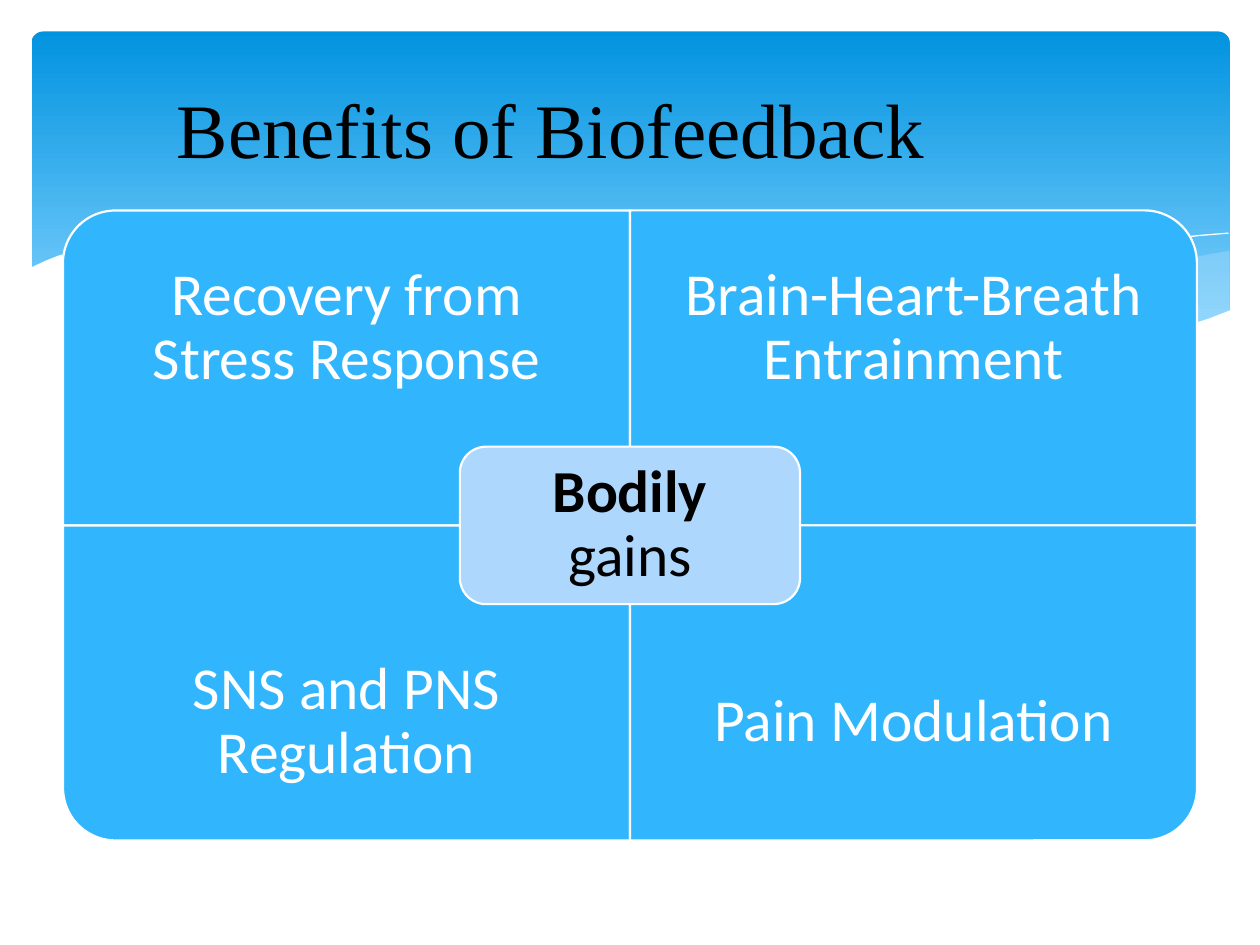
from lxml import etree
from pptx import Presentation
from pptx.dml.color import RGBColor
from pptx.enum.shapes import MSO_SHAPE
from pptx.enum.text import MSO_ANCHOR, PP_ALIGN
from pptx.oxml.ns import qn
from pptx.util import Inches, Pt

ROUND_RECT = MSO_SHAPE.ROUNDED_RECTANGLE
ONE_ROUND_CORNER = MSO_SHAPE.ROUND_1_RECTANGLE
MIDDLE, CENTER = MSO_ANCHOR.MIDDLE, PP_ALIGN.CENTER

WHITE = RGBColor(0xFF, 0xFF, 0xFF)
BLACK = RGBColor(0x00, 0x00, 0x00)
BANNER_TOP = RGBColor(0x02, 0x93, 0xE0)
BANNER_BOTTOM = RGBColor(0x83, 0xD3, 0xFE)
WAVE_BLUE = RGBColor(0xC6, 0xE7, 0xFC)
CARD_BLUE = RGBColor(0x31, 0xB6, 0xFD)
CENTER_BLUE = RGBColor(0xAE, 0xD7, 0xFE)

# Content: quadrants read row by row, with the turn of the rounded corner
TITLE = "Benefits of Biofeedback"
QUADRANTS = [
    ("Recovery from Stress Response", 270),
    ("Brain-Heart-Breath Entrainment", 0),
    ("SNS and PNS Regulation", 180),
    ("Pain Modulation", 90),
]
CENTER_RUNS = [("Bodily", True), (" gains", False)]
TITLE_FORMAT = {"size": Pt(44), "name": "Times New Roman"}
LABEL_FORMAT = {"size": Pt(34), "name": "Calibri"}

# Banner waves, points in inches
RIGHT_WAVE = [
    (9.75, 1.99), (9.48, 2.04), (9.06, 2.13), (8.61, 2.23), (8.05, 2.37),
    (7.53, 2.48), (7.06, 2.57), (6.61, 2.65), (7.05, 2.71), (7.45, 2.75),
    (7.92, 2.77), (8.35, 2.77), (8.72, 2.74), (9.05, 2.69), (9.35, 2.61),
    (9.63, 2.52), (9.76, 2.47), (9.76, 1.99),
]
MIDDLE_WAVE = [
    (8.93, 2.73), (8.37, 2.65), (7.75, 2.54), (7.06, 2.4), (6.29, 2.22),
    (5.69, 2.08), (5.14, 1.98), (4.65, 1.91), (4.2, 1.87), (3.8, 1.86),
    (3.28, 1.87), (2.86, 1.91), (3.42, 1.99), (4.04, 2.11), (4.91, 2.32),
    (5.66, 2.48), (6.34, 2.61), (6.95, 2.7), (7.48, 2.76), (7.96, 2.78),
    (8.48, 2.77), (8.93, 2.73),
]
LONG_LINE = [
    (3.09, 1.95), (3.35, 1.91), (3.74, 1.88), (4.16, 1.87), (4.69, 1.89),
    (5.33, 1.94), (6.08, 2.04), (6.95, 2.19), (7.95, 2.41), (9.07, 2.72),
]
SHORT_LINE = [
    (6.13, 2.57), (6.72, 2.41), (7.48, 2.23), (8.06, 2.1), (8.66, 1.99),
    (9.1, 1.92), (9.51, 1.87), (9.75, 1.85),
]
WHITE_WAVE = [
    (9.77, 2.46), (9.59, 2.53), (9.4, 2.59), (9.1, 2.67), (8.75, 2.73),
    (8.37, 2.76), (7.93, 2.76), (7.44, 2.74), (6.88, 2.68), (6.26, 2.58),
    (5.55, 2.45), (4.75, 2.27), (3.91, 2.07), (3.39, 1.97), (2.92, 1.91),
    (2.5, 1.86), (2.11, 1.84), (1.77, 1.84), (1.32, 1.86), (0.95, 1.91),
    (0.67, 1.97), (0.46, 2.03), (0.36, 2.07), (0.23, 2.13), (0.23, 3.29),
    (9.77, 3.29),
]
# Points, fill, opacity in percent
WAVES = [
    (RIGHT_WAVE, WAVE_BLUE, 29),
    (MIDDLE_WAVE, WAVE_BLUE, 40),
    (LONG_LINE, None, 100),
    (SHORT_LINE, None, 100),
    (WHITE_WAVE, WHITE, 100),
]

# Layout in inches
GRID_LEFT, GRID_TOP = 0.5, 1.67
CARD_WIDTH, CARD_HEIGHT = 4.5, 2.5
LABEL_HEIGHT = 0.75 * CARD_HEIGHT
CENTER_WIDTH, CENTER_HEIGHT = 0.6 * CARD_WIDTH, 0.5 * CARD_HEIGHT


def add_wave(slide, points, color, opacity):
    corners = [(Inches(x), Inches(y)) for x, y in points]
    builder = slide.shapes.build_freeform(*corners[0])
    builder.add_line_segments(corners[1:], close=color is not None)
    shape = builder.convert_to_shape()
    shape.shadow.inherit = False
    if color is None:
        shape.fill.background()
        shape.line.color.rgb = WHITE
        shape.line.width = Pt(0)
        return
    shape.fill.solid()
    shape.fill.fore_color.rgb = color
    shape.line.fill.background()
    if opacity < 100:
        color_element = shape._element.spPr.find(".//" + qn("a:srgbClr"))
        etree.SubElement(color_element, qn("a:alpha"), val=str(opacity * 1000))


def add_card(slide, kind, center_x, center_y, width, height, color, rotation=0):
    if rotation % 180:
        width, height = height, width
    shape = slide.shapes.add_shape(
        kind, Inches(center_x - width / 2), Inches(center_y - height / 2),
        Inches(width), Inches(height))
    shape.rotation = rotation
    shape.shadow.inherit = False
    shape.fill.solid()
    shape.fill.fore_color.rgb = color
    shape.line.color.rgb = WHITE
    shape.line.width = Pt(1.25)


def add_text(slide, box, runs, font_format, color, inset=None, line_spacing=None):
    frame = slide.shapes.add_textbox(*map(Inches, box)).text_frame
    frame.word_wrap = True
    frame.vertical_anchor = MIDDLE
    if inset is not None:
        for side in ("left", "right", "top", "bottom"):
            setattr(frame, f"margin_{side}", Inches(inset))
    paragraph = frame.paragraphs[0]
    paragraph.alignment = CENTER
    paragraph.line_spacing = line_spacing
    for text, bold in runs:
        run = paragraph.add_run()
        run.text = text
        run.font.bold = bold
        run.font.color.rgb = color
        for name, value in font_format.items():
            setattr(run.font, name, value)


def main():
    presentation = Presentation()
    presentation.slide_width, presentation.slide_height = Inches(10), Inches(7.5)
    slide = presentation.slides.add_slide(presentation.slide_layouts[6])

    # Gradient banner with waves
    banner = slide.shapes.add_shape(
        ROUND_RECT, Inches(0.25), Inches(0.25), Inches(9.51), Inches(2.7))
    banner.adjustments[0] = 0.034
    banner.shadow.inherit = False
    banner.line.fill.background()
    banner.fill.gradient()
    banner.fill.gradient_angle = 270
    stops = [(0, BANNER_TOP), (0.9, BANNER_BOTTOM)]
    for stop, (position, color) in zip(banner.fill.gradient_stops, stops):
        stop.position = position
        stop.color.rgb = color
    for points, color, opacity in WAVES:
        add_wave(slide, points, color, opacity)

    # Title
    add_text(slide, (0.25, 0.33, 8.25, 1.37), [(TITLE, False)], TITLE_FORMAT, BLACK)

    # Four quadrants, labels against the outer edges
    for index, (label, rotation) in enumerate(QUADRANTS):
        row, column = divmod(index, 2)
        left = GRID_LEFT + column * CARD_WIDTH
        top = GRID_TOP + row * CARD_HEIGHT
        add_card(slide, ONE_ROUND_CORNER, left + CARD_WIDTH / 2,
                 top + CARD_HEIGHT / 2, CARD_WIDTH, CARD_HEIGHT, CARD_BLUE, rotation)
        label_top = top + row * (CARD_HEIGHT - LABEL_HEIGHT)
        add_text(slide, (left, label_top, CARD_WIDTH, LABEL_HEIGHT),
                 [(label, False)], LABEL_FORMAT, WHITE, 0.26, 0.9)

    # Centre card
    center_x, center_y = GRID_LEFT + CARD_WIDTH, GRID_TOP + CARD_HEIGHT
    add_card(slide, ROUND_RECT, center_x, center_y,
             CENTER_WIDTH, CENTER_HEIGHT, CENTER_BLUE)
    text_width, text_height = CENTER_WIDTH - 0.12, CENTER_HEIGHT - 0.12
    add_text(slide, (center_x - text_width / 2, center_y - text_height / 2,
                     text_width, text_height),
             CENTER_RUNS, LABEL_FORMAT, BLACK, 0.14, 0.9)

    presentation.save("out.pptx")


if __name__ == "__main__":
    main()
